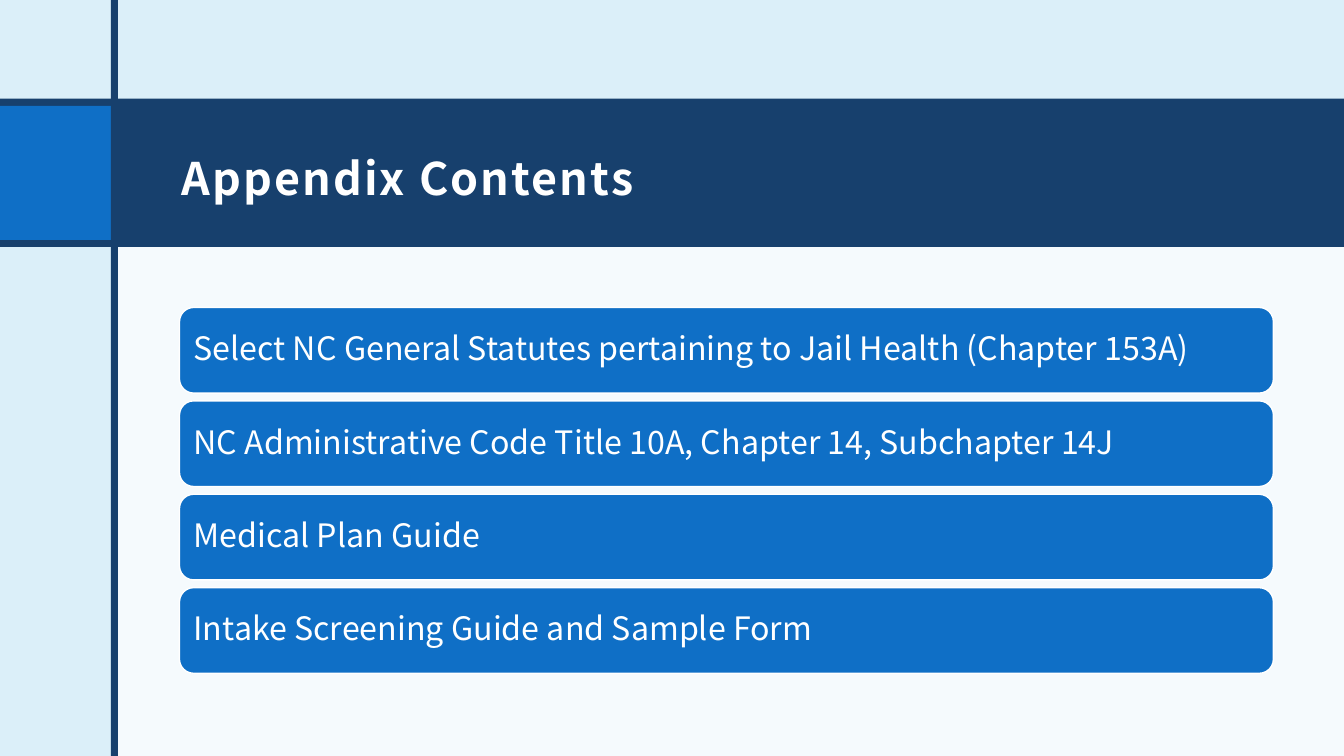
from dataclasses import dataclass

from lxml.etree import SubElement
from pptx import Presentation
from pptx.dml.color import RGBColor
from pptx.enum.shapes import MSO_SHAPE
from pptx.enum.text import MSO_ANCHOR, PP_ALIGN
from pptx.oxml.ns import qn
from pptx.util import Inches, Pt


@dataclass(frozen=True)
class Theme:
    font: str = "Noto Sans CJK JP"
    background: RGBColor = RGBColor(0xDB, 0xEF, 0xF9)
    navy: RGBColor = RGBColor(0x17, 0x40, 0x6D)
    blue: RGBColor = RGBColor(0x0F, 0x6F, 0xC6)
    white: RGBColor = RGBColor(0xFF, 0xFF, 0xFF)
    title_size: int = 32
    entry_size: int = 23


SLIDE_WIDTH, SLIDE_HEIGHT = 13.33, 7.5
RULE_LEFT, RULE_WIDTH = 1.1, 0.07
PANEL_LEFT, PANEL_TOP = 1.14, 2.33
BAND_TOP, BAND_HEIGHT = 0.98, 1.47
TITLE_TOP, TITLE_HEIGHT = 1.05, 1.33
ENTRY_LEFT, ENTRY_TOP, ENTRY_BOTTOM = 1.78, 3.05, 6.68
ENTRY_WIDTH, ENTRY_HEIGHT = 10.85, 0.85

ENTRIES = [
    "Select NC General Statutes pertaining to Jail Health (Chapter 153A)",
    "NC Administrative Code Title 10A, Chapter 14, Subchapter 14J",
    "Medical Plan Guide",
    "Intake Screening Guide and Sample Form",
]


class SlideBuilder:
    def __init__(self, slide, theme):
        self.slide = slide
        self.theme = theme

    def background(self, color):
        fill = self.slide.background.fill
        fill.solid()
        fill.fore_color.rgb = color

    def block(self, left, top, width, height, color,
              kind=MSO_SHAPE.RECTANGLE, opacity=100):
        """Draw a filled shape without outline; opacity is in percent."""
        shape = self.slide.shapes.add_shape(
            kind, Inches(left), Inches(top), Inches(width), Inches(height))
        shape.shadow.inherit = False
        shape.fill.solid()
        shape.fill.fore_color.rgb = color
        shape.line.fill.background()
        if opacity < 100:
            color_element = shape._element.spPr.find(qn("a:solidFill"))[0]
            SubElement(color_element, qn("a:alpha"), val=str(opacity * 1000))
        return shape

    def set_text(self, shape, text, size, insets, bold=False):
        """Put one left-aligned line in a shape; insets are left, top, right, bottom."""
        frame = shape.text_frame
        frame.text = text
        frame.word_wrap = True
        frame.vertical_anchor = MSO_ANCHOR.MIDDLE
        (frame.margin_left, frame.margin_top,
         frame.margin_right, frame.margin_bottom) = map(Inches, insets)
        paragraph = frame.paragraphs[0]
        paragraph.alignment = PP_ALIGN.LEFT
        font = paragraph.runs[0].font
        font.name = self.theme.font
        font.size = Pt(size)
        font.bold = bold
        font.color.rgb = self.theme.white
        return paragraph

    def title(self, text, left, top, width, height):
        box = self.slide.shapes.add_textbox(
            Inches(left), Inches(top), Inches(width), Inches(height))
        paragraph = self.set_text(box, text, self.theme.title_size,
                                  (0.12, 0.2, 0.12, 0.1), bold=True)
        paragraph.runs[0].font._element.set("spc", "150")

    def entry(self, text, top):
        shape = self.block(ENTRY_LEFT, top, ENTRY_WIDTH, ENTRY_HEIGHT,
                           self.theme.blue, MSO_SHAPE.ROUNDED_RECTANGLE)
        shape.line.color.rgb = self.theme.white
        shape.line.width = Pt(1)
        paragraph = self.set_text(shape, text, self.theme.entry_size,
                                  (0.1, 0.1, 0.1, 0.1))
        paragraph.line_spacing = 0.9


def main():
    presentation = Presentation()
    presentation.slide_width = Inches(SLIDE_WIDTH)
    presentation.slide_height = Inches(SLIDE_HEIGHT)
    slide = presentation.slides.add_slide(presentation.slide_layouts[6])
    theme = Theme()
    builder = SlideBuilder(slide, theme)

    builder.background(theme.background)
    builder.block(PANEL_LEFT, PANEL_TOP, SLIDE_WIDTH - PANEL_LEFT,
                  SLIDE_HEIGHT - PANEL_TOP, theme.white, opacity=75)
    builder.block(0, BAND_TOP, SLIDE_WIDTH, BAND_HEIGHT, theme.navy)
    builder.block(0, TITLE_TOP, RULE_LEFT, TITLE_HEIGHT, theme.blue)
    builder.block(RULE_LEFT, 0, RULE_WIDTH, SLIDE_HEIGHT, theme.navy)
    builder.title("Appendix Contents", 1.68, TITLE_TOP, 10.95, TITLE_HEIGHT)
    pitch = (ENTRY_BOTTOM - ENTRY_HEIGHT - ENTRY_TOP) / (len(ENTRIES) - 1)
    for index, text in enumerate(ENTRIES):
        builder.entry(text, ENTRY_TOP + index * pitch)

    presentation.save("out.pptx")


if __name__ == "__main__":
    main()
